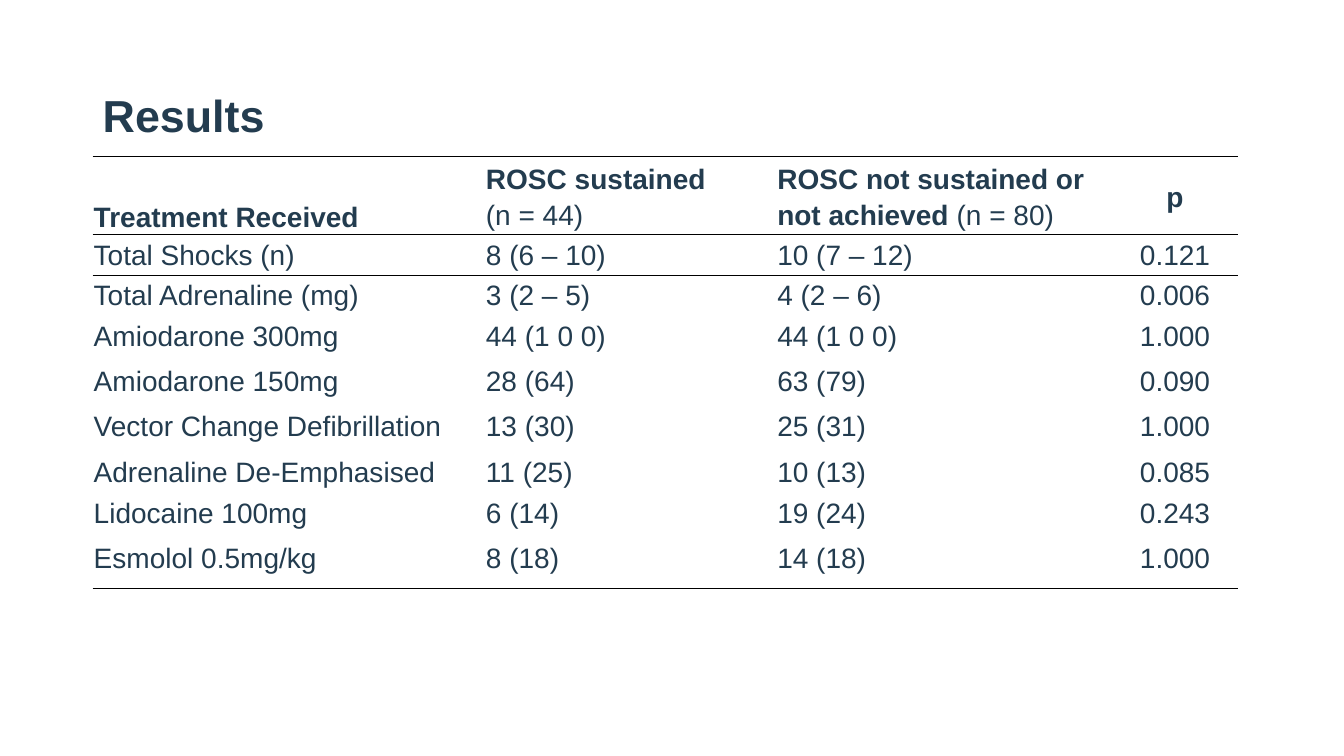
from lxml import etree
from pptx import Presentation
from pptx import util as u
from pptx.dml.color import RGBColor
from pptx.enum import text as t
from pptx.oxml import ns

WIDE, HIGH = 13.33, 7.5
INK, RULE = "233C4F", "000000"
COLS = [3.89, 2.89, 3.33, 1.25]
ROWS = [0.59, 0.31, 0.4, 0.45, 0.45, 0.45, 0.41, 0.45, 0.5]
RULED = {0, 1, 2, len(ROWS)}  # row edges that carry a line

# Each heading is a list of paragraphs, each a list of (words, bold) runs
HEADS = [
    [[("Treatment Received", True)]],
    [[("ROSC sustained", True)], [("(n = 44)", False)]],
    [[("ROSC not sustained or not achieved ", True), ("(n = 80)", False)]],
    [[("p", True)]],
]
DATA = [
    ("Total Shocks (n)", "8 (6 – 10)", "10 (7 – 12)", "0.121"),
    ("Total Adrenaline (mg)", "3 (2 – 5)", "4 (2 – 6)", "0.006"),
    ("Amiodarone 300mg", "44 (1 0 0)", "44 (1 0 0)", "1.000"),
    ("Amiodarone 150mg", "28 (64)", "63 (79)", "0.090"),
    ("Vector Change Defibrillation", "13 (30)", "25 (31)", "1.000"),
    ("Adrenaline De-Emphasised", "11 (25)", "10 (13)", "0.085"),
    ("Lidocaine 100mg", "6 (14)", "19 (24)", "0.243"),
    ("Esmolol 0.5mg/kg", "8 (18)", "14 (18)", "1.000"),
]


def color(code):
    return RGBColor.from_string(code)


def write(frame, paras, size=20, align=t.PP_ALIGN.LEFT, space=1.14):
    for i, runs in enumerate(paras):
        para = frame.add_paragraph() if i else frame.paragraphs[0]
        para.alignment, para.line_spacing = align, space
        for words, bold in runs:
            run = para.add_run()
            run.text = words
            font = run.font
            font.name, font.size, font.bold = "Arial", u.Pt(size), bold
            font.color.rgb = color(INK)


def edge(cell, side, ruled):
    props = cell._tc.get_or_add_tcPr()
    line = etree.SubElement(props, ns.qn("a:ln" + side), w=str(u.Pt(1)))
    if ruled:
        fill = etree.SubElement(line, ns.qn("a:solidFill"))
        etree.SubElement(fill, ns.qn("a:srgbClr"), val=RULE)
    else:
        etree.SubElement(line, ns.qn("a:noFill"))


def title(slide, box):
    shape = slide.shapes.add_textbox(*map(u.Inches, box))
    frame = shape.text_frame
    frame.word_wrap = True
    frame.vertical_anchor = t.MSO_ANCHOR.MIDDLE
    write(frame, [[("Results", True)]], size=32, space=0.9)


def grid(slide, box):
    shape = slide.shapes.add_table(len(ROWS), len(COLS), *map(u.Inches, box))
    table = shape.table
    table.first_row = table.horz_banding = False
    for col, width in zip(table.columns, COLS):
        col.width = u.Inches(width)
    for row, height in zip(table.rows, ROWS):
        row.height = u.Inches(height)
    shape.height = u.Inches(box[3])

    body = [[[[(words, False)]] for words in row] for row in DATA]
    for r, row in enumerate([HEADS] + body):
        for c, paras in enumerate(row):
            cell = table.cell(r, c)
            cell.margin_left = cell.margin_right = u.Inches(0.01)
            cell.margin_top = cell.margin_bottom = u.Inches(0.01)
            if r:
                cell.vertical_anchor = t.MSO_ANCHOR.TOP
            else:
                cell.vertical_anchor = t.MSO_ANCHOR.MIDDLE if c else t.MSO_ANCHOR.BOTTOM
            last = c == len(COLS) - 1
            write(cell.text_frame, paras,
                  align=t.PP_ALIGN.CENTER if last else t.PP_ALIGN.LEFT)
            # Borders come before the fill
            for side, ruled in (("L", False), ("R", False),
                                ("T", r in RULED), ("B", r + 1 in RULED)):
                edge(cell, side, ruled)
            cell.fill.background()


def main():
    deck = Presentation()
    deck.slide_width, deck.slide_height = u.Inches(WIDE), u.Inches(HIGH)
    slide = deck.slides.add_slide(deck.slide_layouts[6])
    left = 0.069 * WIDE
    title(slide, (left, HIGH / 15, 6.99, 0.18 * HIGH))
    grid(slide, (left, 1.55, sum(COLS), 4.31))
    deck.save("out.pptx")


if __name__ == "__main__":
    main()
